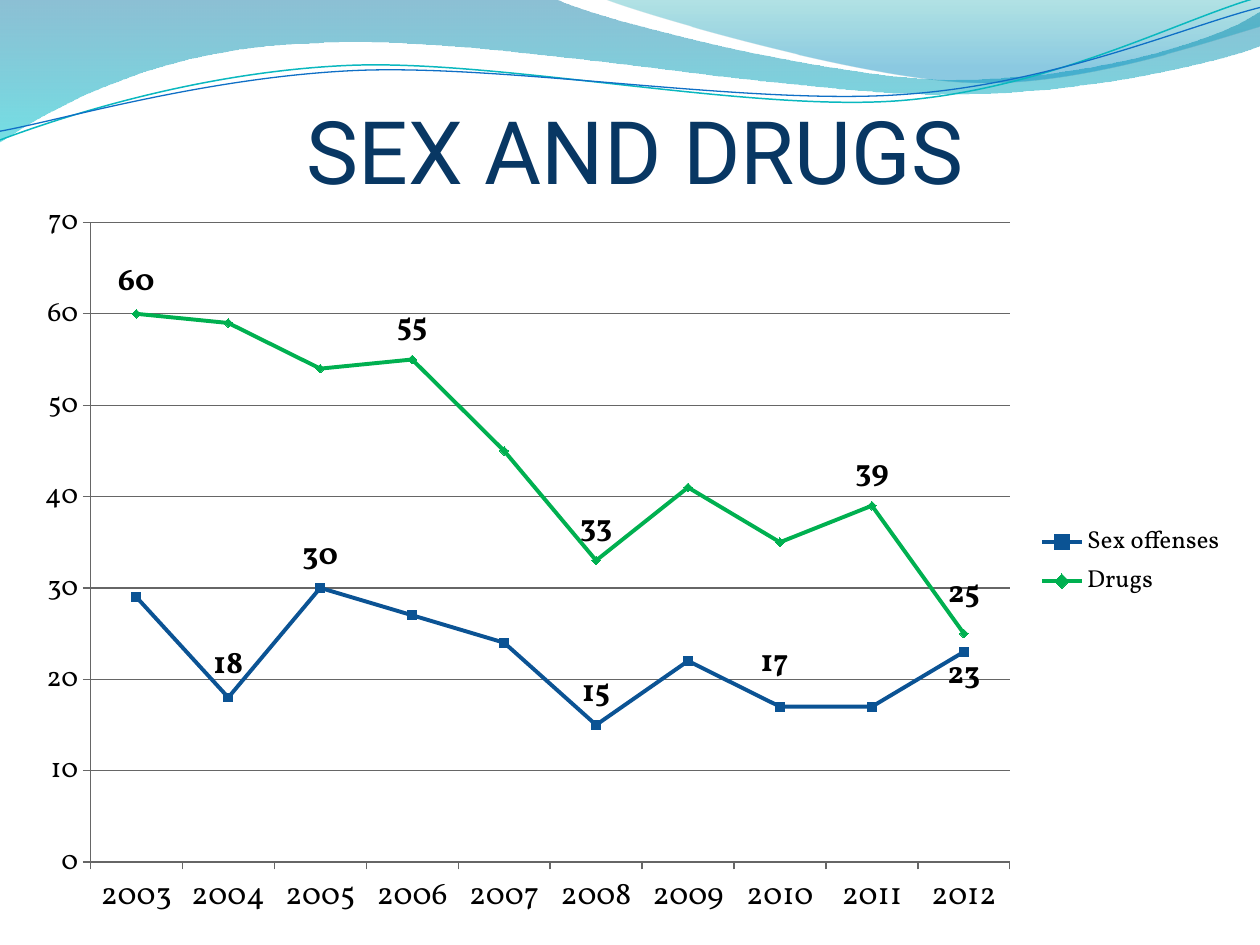
from lxml import etree
from pptx import Presentation
from pptx import util as u
from pptx.chart import data as cd
from pptx.dml import color as col
from pptx.enum import chart as ce, text as te
from pptx.oxml import parse_xml
from pptx.oxml import ns

Pt = u.Pt
COLORS = {
    "title": "083763", "text": "000000", "grid": "666666",
    "sex": "0B5394", "drugs": "00B050",
    "blue": "0074A1", "cyan": "00C6CF", "teal": "00A1A9", "sky": "008BBF",
    "line1": "0AB8BF", "line2": "0F6FC6",
}
YEARS = [str(y) for y in range(2003, 2013)]
SEX = [29, 18, 30, 27, 24, 15, 22, 17, 17, 23]
DRUGS = [60, 59, 54, 55, 45, 33, 41, 35, 39, 25]

# Each step is a line (x, y) or a cubic curve (x1, y1, x2, y2, x, y), in points.
BAND = [(0, 0), (317, -0.7), (343, 12, 478, 45.4, 546, 45.4),
        (614, 45.4, 690, 26.6, 720, 6.5), (720.7, 26),
        (708, 31.7, 626, 54.7, 537, 54), (448, 54, 275, 20.2, 185, 24.5),
        (93, 26, 33, 59.8, -0.7, 81.4)]
CREST = [(345, -0.7), (366, 8, 491, 44.6, 554, 46.8),
         (616, 49.7, 692, 23, 720, 15), (720, 0)]
WAVE1 = [(0, 80), (34.6, 67, 114, 41, 199.4, 37.4),
         (284.4, 33.8, 427, 64, 513.4, 57.6), (600, 51, 675, 10.8, 718.6, -1.4)]
WAVE2 = [(0, 75), (33.8, 69, 118, 44, 203.8, 40.3),
         (290, 36.7, 430, 60.5, 516, 54), (602, 48.2, 677.5, 15, 720, 4.3)]


def rgb(name):
    return col.RGBColor.from_string(COLORS[name])


def add_path(slide, steps, close):
    """Draw a freeform through the step ends, then bend its curved steps."""
    ends = [(Pt(s[-2]), Pt(s[-1])) for s in steps]
    pen = slide.shapes.build_freeform(*ends[0], scale=1.0)
    pen.add_line_segments(ends[1:], close=close)
    shape = pen.convert_to_shape()
    shape.shadow.inherit = False
    for line, step in zip(shape.element.xpath(".//a:lnTo"), steps[1:]):
        if len(step) == 6:
            curve = etree.Element(ns.qn("a:cubicBezTo"))
            for x, y in zip(step[::2], step[1::2]):
                point = etree.SubElement(curve, ns.qn("a:pt"))
                point.set("x", str(Pt(x) - shape.left))
                point.set("y", str(Pt(y) - shape.top))
            line.getparent().replace(line, curve)
    return shape


def add_band(slide, steps, stops):
    """Add a filled area; stops are (position, colour, opacity in percent)."""
    shape = add_path(slide, steps, True)
    shape.line.fill.background()
    shape.fill.gradient()
    shape.fill.gradient_angle = 270
    for stop, (pos, name, _) in zip(shape.fill.gradient_stops, stops):
        stop.position = pos
        stop.color.rgb = rgb(name)
    tints = shape.element.xpath(".//a:gradFill//a:srgbClr")
    for tint, (_, _, alpha) in zip(tints, stops):
        etree.SubElement(tint, ns.qn("a:alpha")).set("val", str(alpha * 1000))


def add_wave(slide, steps, name, width):
    shape = add_path(slide, steps, False)
    shape.fill.background()
    shape.line.color.rgb = rgb(name)
    shape.line.width = Pt(width)


def add_title(slide, words):
    box = slide.shapes.add_textbox(Pt(12), Pt(47.7), Pt(702), Pt(67.7))
    frame = box.text_frame
    frame.word_wrap = True
    frame.vertical_anchor = te.MSO_ANCHOR.BOTTOM
    frame.margin_left = frame.margin_right = frame.margin_bottom = 0
    para = frame.paragraphs[0]
    para.alignment = te.PP_ALIGN.CENTER
    run = para.add_run()
    run.text = words
    run.font.size = Pt(50)
    run.font.name = "Roboto"
    run.font.color.rgb = rgb("title")


def set_font(font, size, bold=False):
    font.name = "Vollkorn"
    font.size = Pt(size)
    font.bold = bold
    font.color.rgb = rgb("text")


def layout(x, y, w=None, h=None):
    """Make a manual layout in fractions of the chart."""
    parts = [("x", x), ("y", y)]
    if w:
        parts = [("layoutTarget", "inner"), ("xMode", "edge"),
                 ("yMode", "edge")] + parts + [("w", w), ("h", h)]
    body = "".join(f'<c:{tag} val="{val}"/>' for tag, val in parts)
    return parse_xml(f'<c:layout {ns.nsdecls("c")}><c:manualLayout>{body}'
                     "</c:manualLayout></c:layout>")


def style_series(series, name, marker, shown, below=()):
    series.smooth = False
    series.format.line.color.rgb = rgb(name)
    series.format.line.width = Pt(2.25)
    series.marker.style = marker
    series.marker.size = 5
    series.marker.format.fill.solid()
    series.marker.format.fill.fore_color.rgb = rgb(name)
    series.marker.format.line.color.rgb = rgb(name)
    spot = ce.XL_LABEL_POSITION
    for i in shown:
        label = series.points[i].data_label
        set_font(label.font, 18, True)
        label.position = spot.BELOW if i in below else spot.ABOVE
    series.data_labels.show_value = False


def move_label(chart, row, i, x, y):
    spot = f'.//c:ser[{row}]//c:dLbl[c:idx/@val="{i}"]'
    chart.element.xpath(spot)[0].insert(1, layout(x, y))


def style_axis(axis, size):
    set_font(axis.tick_labels.font, size)
    axis.major_tick_mark = ce.XL_TICK_MARK.OUTSIDE
    axis.format.line.color.rgb = rgb("grid")
    axis.format.line.width = Pt(0.75)


def add_lines(slide):
    data = cd.CategoryChartData()
    data.categories = YEARS
    data.add_series("Sex offenses", SEX)
    data.add_series("Drugs", DRUGS)
    chart = slide.shapes.add_chart(ce.XL_CHART_TYPE.LINE_MARKERS, Pt(12), Pt(108),
                                   Pt(696), Pt(426), data).chart
    set_font(chart.font, 10)
    chart.has_title = False
    chart.has_legend = True
    chart.legend.position = ce.XL_LEGEND_POSITION.RIGHT
    chart.legend.include_in_layout = False
    set_font(chart.legend.font, 14)

    style_axis(chart.category_axis, 18)
    axis = chart.value_axis
    style_axis(axis, 16)
    axis.minimum_scale, axis.maximum_scale, axis.major_unit = 0, 70, 10
    axis.has_major_gridlines = True
    axis.major_gridlines.format.line.color.rgb = rgb("grid")
    axis.major_gridlines.format.line.width = Pt(0.75)

    plot = chart.plots[0]
    plot.vary_by_categories = False
    sex, drugs = plot.series
    mark = ce.XL_MARKER_STYLE
    style_series(sex, "sex", mark.SQUARE, (1, 2, 5, 8, 9), below=(9,))
    style_series(drugs, "drugs", mark.DIAMOND, (0, 3, 5, 8, 9))

    area = chart.element.xpath(".//c:plotArea")[0]
    for old in area.xpath("./c:layout"):
        area.remove(old)
    area.insert(0, layout(0.057, 0.045, 0.755, 0.858))
    for leader in area.xpath(".//c:showLeaderLines"):
        leader.set("val", "0")
    move_label(chart, 1, 8, -0.08, -0.015)
    for row in (1, 2):
        move_label(chart, row, 9, 0, -0.01)


def main():
    deck = Presentation()
    deck.slide_width, deck.slide_height = Pt(720), Pt(540)
    slide = deck.slides.add_slide(deck.slide_layouts[6])
    add_band(slide, BAND, [(0, "blue", 45), (1, "cyan", 55)])
    add_band(slide, CREST, [(0, "teal", 30), (0.8, "sky", 45)])
    add_wave(slide, WAVE1, "line1", 0.85)
    add_wave(slide, WAVE2, "line2", 0.75)
    add_title(slide, "SEX AND DRUGS")
    add_lines(slide)
    deck.save("out.pptx")


if __name__ == "__main__":
    main()
